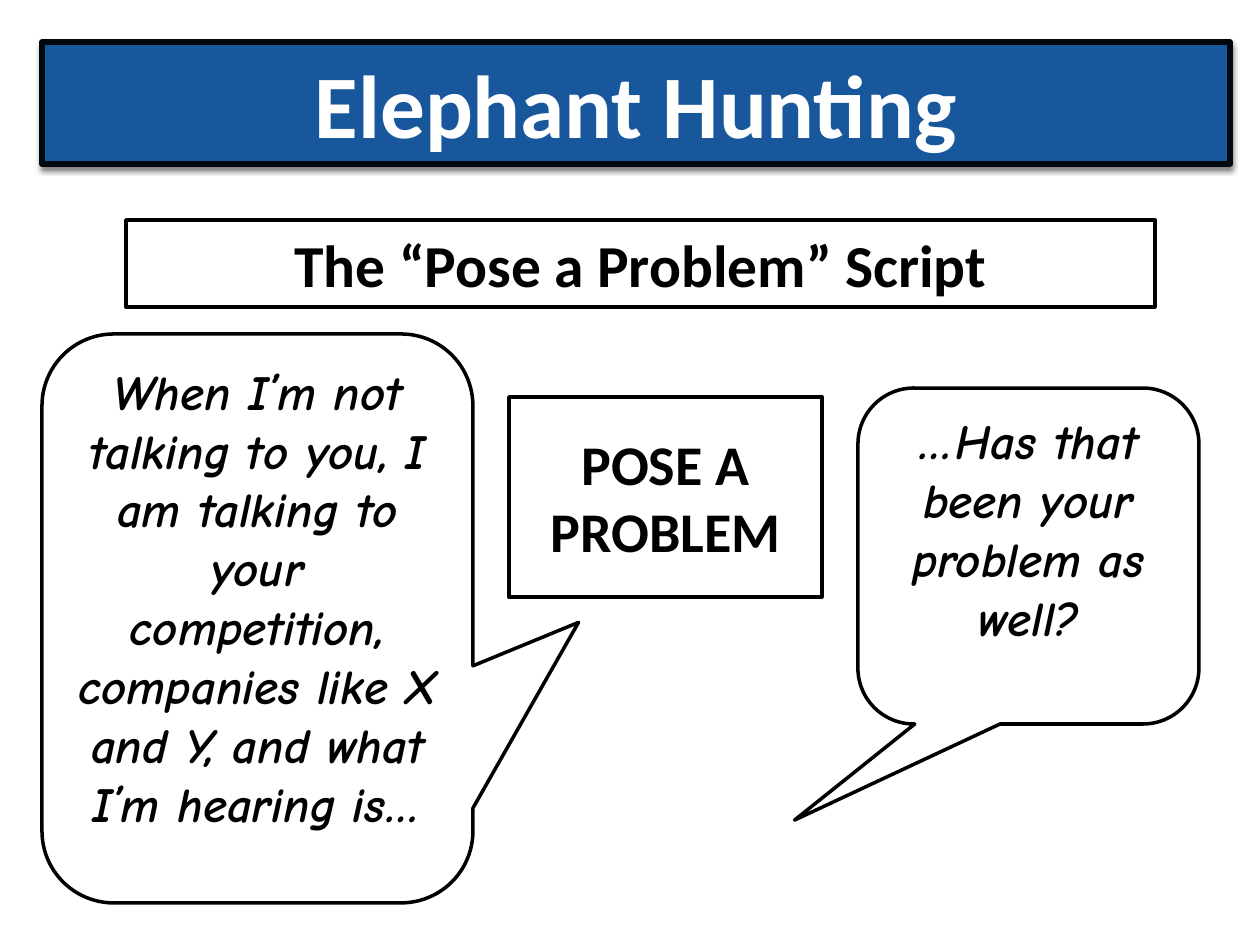
from lxml import etree
from pptx import Presentation
from pptx import util as u
from pptx.dml.color import RGBColor
from pptx.enum import shapes, text
from pptx.oxml import ns

PX = 914400 / 126
WHITE = RGBColor(255, 255, 255)
BLACK = RGBColor(0, 0, 0)
BLUE = RGBColor(0x18, 0x57, 0x9B)
NAVY = RGBColor(0x02, 0x08, 0x0F)
RECT = shapes.MSO_SHAPE.RECTANGLE
CALLOUT = shapes.MSO_SHAPE.ROUNDED_RECTANGULAR_CALLOUT

deck = Presentation()
deck.slide_width = u.Inches(10)
deck.slide_height = u.Inches(7.5)
page = deck.slides.add_slide(deck.slide_layouts[6])


def add_box(kind, place, wording, size, fill=WHITE, line=BLACK, width=2, color=BLACK):
    box = page.shapes.add_shape(kind, *(round(n * PX) for n in place))
    box.shadow.inherit = False
    box.fill.solid()
    box.fill.fore_color.rgb = fill
    box.line.color.rgb = line
    box.line.width = u.Pt(width)
    frame = box.text_frame
    frame.word_wrap = True
    frame.vertical_anchor = text.MSO_ANCHOR.MIDDLE
    para = frame.paragraphs[0]
    para.text = wording
    para.alignment = text.PP_ALIGN.CENTER
    para.font.name = "Calibri"
    para.font.size = u.Pt(size)
    para.font.bold = True
    para.font.color.rgb = color
    return box


title = add_box(RECT, (42, 42, 1188, 122), "Elephant Hunting", 51, BLUE, NAVY, 3, WHITE)
effects = title._element.spPr.find(ns.qn("a:effectLst"))
shadow = etree.SubElement(effects, ns.qn("a:outerShdw"), blurRad=str(u.Pt(3)),
                          dist=str(u.Pt(2)), dir="5400000", rotWithShape="0")
shade = etree.SubElement(shadow, ns.qn("a:srgbClr"), val=str(BLACK))
etree.SubElement(shade, ns.qn("a:alpha"), val="50000")

add_box(RECT, (126, 220, 1029, 87), "The “Pose a Problem” Script", 34)
add_box(RECT, (509, 397, 313, 200), "POSE A PROBLEM", 32)

speeches = [
    ((42, 334, 431, 569), (0.745, 0.007),
     "When I’m not talking to you, I am talking to your competition, "
     "companies like X and Y, and what I’m hearing is…"),
    ((858, 388, 341, 336), (-0.686, 0.786), "…Has that been your problem as well?"),
]
for place, tip, wording in speeches:
    speech = add_box(CALLOUT, place, wording, 28)
    speech.adjustments[0], speech.adjustments[1] = tip
    speech.text_frame.vertical_anchor = text.MSO_ANCHOR.TOP
    font = speech.text_frame.paragraphs[0].font
    font.name = "Comic Neue"
    font.italic = True

deck.save("out.pptx")
